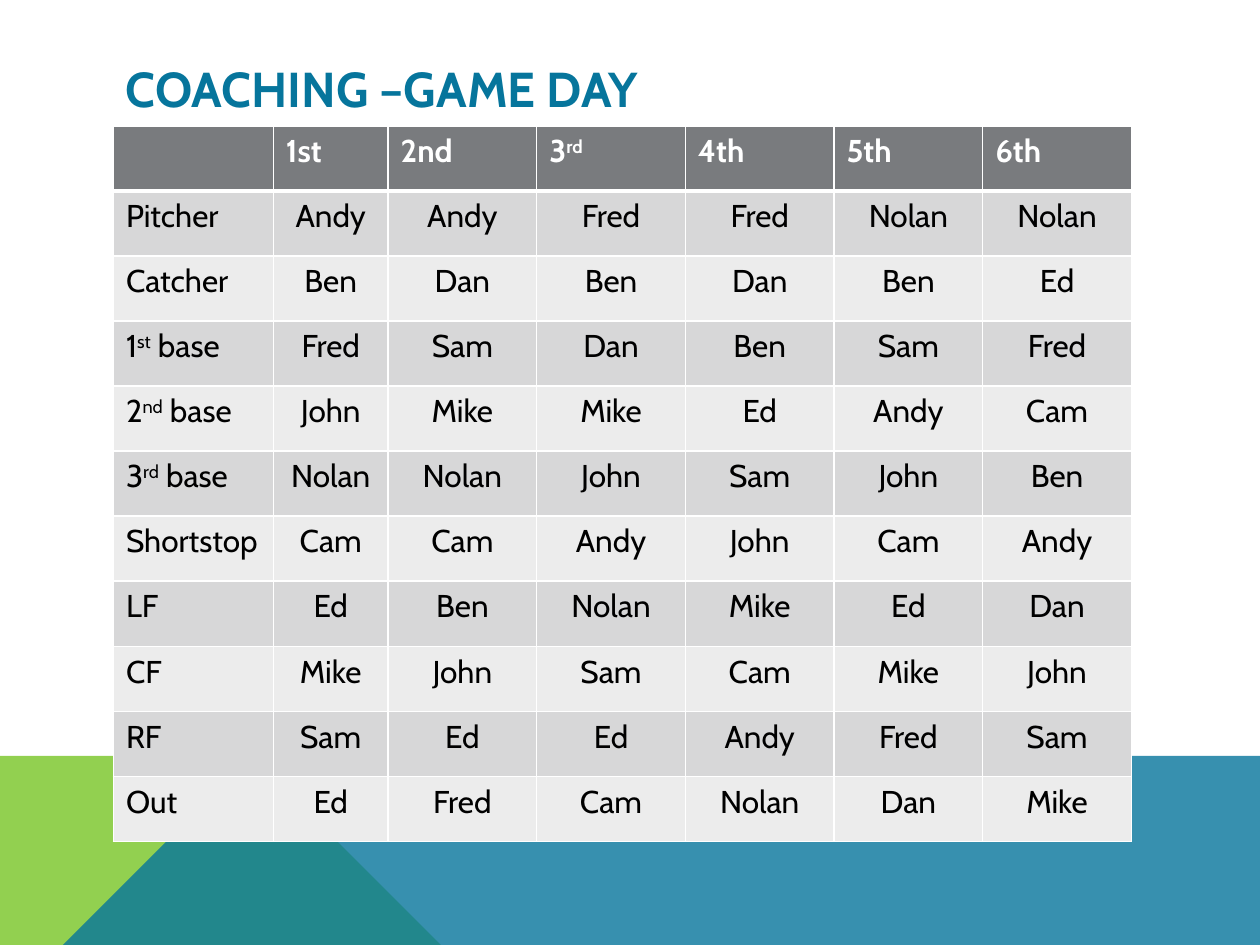
from lxml.etree import SubElement
from pptx import Presentation
from pptx.dml.color import RGBColor
from pptx.enum.text import MSO_ANCHOR, PP_ALIGN
from pptx.oxml.ns import qn
from pptx.util import Inches, Pt

WIDTH, HEIGHT = 10, 7.5
FONT = "Cabin"
TITLE = "COACHING –GAME DAY"
TITLE_FORMAT = {"size": Pt(28), "bold": True}
HEADER_FORMAT = {"size": Pt(18), "bold": True}
BODY_FORMAT = {"size": Pt(18), "bold": False}
HEADER_FILL, BAND_FILLS = "797B7E", ("D7D7D8", "ECECEC")
BLUE, GREEN, WHITE, BLACK = "06759C", "92D050", "FFFFFF", "000000"

INNINGS = ["", "1st", "2nd", "3^rd", "4th", "5th", "6th"]
LINEUP = [
    ("Pitcher", "Andy Andy Fred Fred Nolan Nolan"),
    ("Catcher", "Ben Dan Ben Dan Ben Ed"),
    ("1^st^ base", "Fred Sam Dan Ben Sam Fred"),
    ("2^nd^ base", "John Mike Mike Ed Andy Cam"),
    ("3^rd^ base", "Nolan Nolan John Sam John Ben"),
    ("Shortstop", "Cam Cam Andy John Cam Andy"),
    ("LF", "Ed Ben Nolan Mike Ed Dan"),
    ("CF", "Mike John Sam Cam Mike John"),
    ("RF", "Sam Ed Ed Andy Fred Sam"),
    ("Out", "Ed Fred Cam Nolan Dan Mike"),
]
LEFT, TABLE_TOP, TABLE_HEIGHT = 0.9, 1, 5.68
COLUMNS = [1.27, 0.91] + [1.18] * 5

BAND_TOP, FOLD = 5.52, 2.23
BANDS = [
    (GREEN, 100, [(0, HEIGHT), (0, BAND_TOP), (FOLD, BAND_TOP), (3.91, HEIGHT)]),
    (BLUE, 80, [(0, HEIGHT), (FOLD, BAND_TOP), (WIDTH, BAND_TOP), (WIDTH, HEIGHT)]),
]


def color(value):
    return RGBColor.from_string(value)


def paint(fill, value):
    fill.solid()
    fill.fore_color.rgb = color(value)


def write(paragraph, text, ink, formats):
    for index, part in enumerate(text.split("^")):
        if not part:
            continue
        span = paragraph.add_run()
        span.text = part
        span.font.name = FONT
        span.font.color.rgb = color(ink)
        for name, value in formats.items():
            setattr(span.font, name, value)
        if index % 2:
            span.font._element.set("baseline", "30000")


def draw_band(page, value, opacity, points):
    builder = page.shapes.build_freeform(*points[0], scale=Inches(1))
    builder.add_line_segments(points[1:], close=True)
    band = builder.convert_to_shape()
    band.shadow.inherit = False
    band.line.fill.background()
    paint(band.fill, value)
    if opacity < 100:
        shade = band._element.spPr.find(qn("a:solidFill"))[0]
        SubElement(shade, qn("a:alpha"), val=str(opacity * 1000))


def set_borders(cell, top, bottom):
    properties = cell._tc.get_or_add_tcPr()
    for side, points in {"L": 1, "R": 1, "T": top, "B": bottom}.items():
        line = SubElement(properties, qn(f"a:ln{side}"), w=str(Pt(points)))
        solid = SubElement(line, qn("a:solidFill"))
        SubElement(solid, qn("a:srgbClr"), val=WHITE)


def add_title(page):
    box = page.shapes.add_textbox(Inches(LEFT), Inches(0.4), Inches(8.22), Inches(0.6))
    box.text_frame.word_wrap = True
    box.text_frame.vertical_anchor = MSO_ANCHOR.MIDDLE
    write(box.text_frame.paragraphs[0], TITLE, BLUE, TITLE_FORMAT)


def add_lineup(page):
    rows = [INNINGS] + [[position, *names.split()] for position, names in LINEUP]
    table = page.shapes.add_table(
        len(rows), len(COLUMNS), Inches(LEFT), Inches(TABLE_TOP),
        Inches(sum(COLUMNS)), Inches(TABLE_HEIGHT),
    ).table
    for column, width in zip(table.columns, COLUMNS):
        column.width = Inches(width)
    for r, row in enumerate(rows):
        header = r == 0
        for c, text in enumerate(row):
            cell = table.cell(r, c)
            set_borders(cell, 3 if r == 1 else 1, 3 if header else 1)
            paint(cell.fill, HEADER_FILL if header else BAND_FILLS[(r - 1) % 2])
            paragraph = cell.text_frame.paragraphs[0]
            paragraph.alignment = PP_ALIGN.LEFT if header or c == 0 else PP_ALIGN.CENTER
            write(paragraph, text, WHITE if header else BLACK,
                  HEADER_FORMAT if header else BODY_FORMAT)


def main():
    deck = Presentation()
    deck.slide_width, deck.slide_height = Inches(WIDTH), Inches(HEIGHT)
    page = deck.slides.add_slide(deck.slide_layouts[6])
    for band in BANDS:
        draw_band(page, *band)
    add_title(page)
    add_lineup(page)
    deck.save("out.pptx")


if __name__ == "__main__":
    main()
